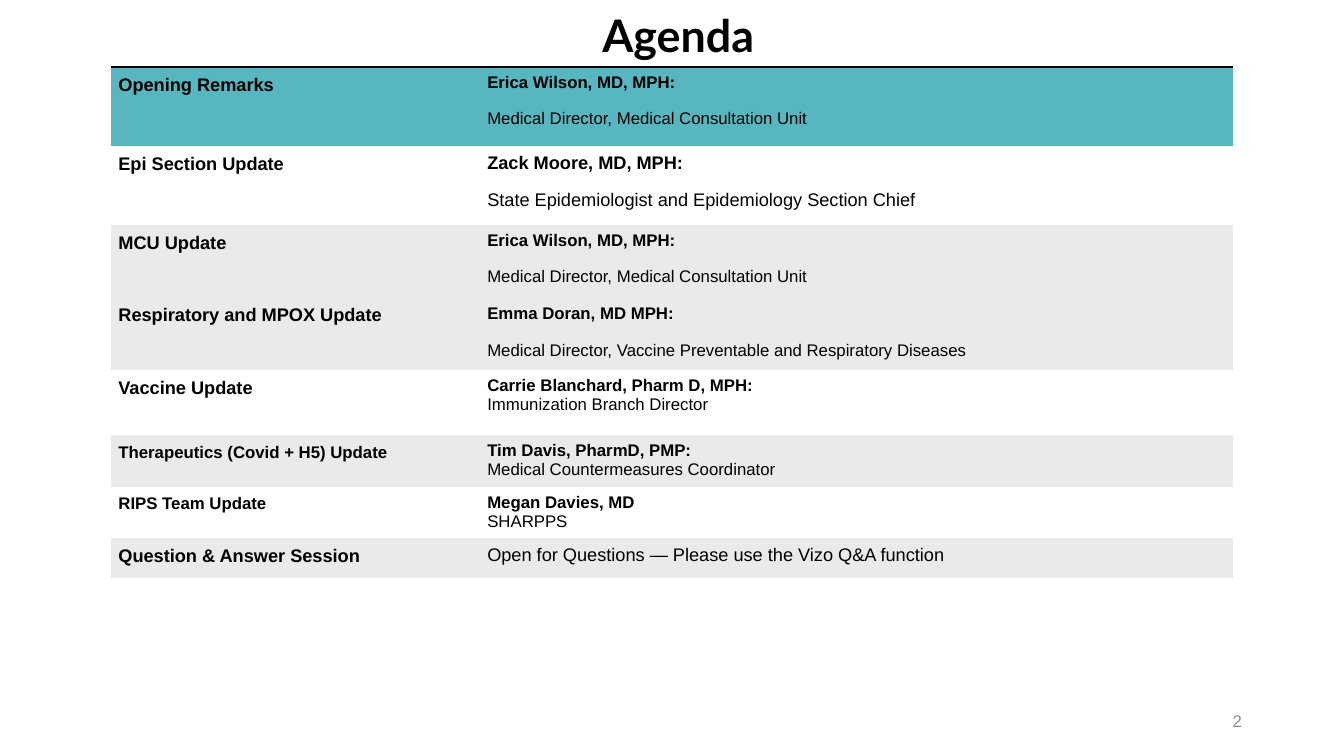
"""Builds the agenda slide with its table of speakers."""
from lxml.etree import SubElement
from pptx import Presentation
from pptx.dml.color import RGBColor
from pptx.enum.text import MSO_ANCHOR, PP_ALIGN
from pptx.oxml import parse_xml
from pptx.oxml.ns import nsdecls, qn
from pptx.util import Pt

HUES = {"ink": "000000", "teal": "58B6C0", "grey": "EAEAEA",
        "white": "FFFFFF", "page": "8C8C8C"}
PLAIN = "{2D5ABB26-0587-4C30-8999-92F81FD0307C}"
COLS = (263.5, 537.8)

# height, fill, topic, topic size, speaker, role, text size, gap
ROWS = [
    (56.4, "teal", "Opening Remarks", 13, "Erica Wilson, MD, MPH:",
     "Medical Director, Medical Consultation Unit", 12, 12),
    (56.4, "white", "Epi Section Update", 13, "Zack Moore, MD, MPH:",
     "State Epidemiologist and Epidemiology Section Chief", 13, 12),
    (51.8, "grey", "MCU Update", 13, "Erica Wilson, MD, MPH:",
     "Medical Director, Medical Consultation Unit", 12, 12),
    (51.8, "grey", "Respiratory and MPOX Update", 13, "Emma Doran, MD MPH:",
     "Medical Director, Vaccine Preventable and Respiratory Diseases",
     12, 13.5),
    (46.4, "white", "Vaccine Update", 13, "Carrie Blanchard, Pharm D, MPH:",
     "Immunization Branch Director", 12, 0),
    (37.1, "grey", "Therapeutics (Covid + H5) Update", 12,
     "Tim Davis, PharmD, PMP:", "Medical Countermeasures Coordinator", 12, 0),
    (36.8, "white", "RIPS Team Update", 12, "Megan Davies, MD",
     "SHARPPS", 12, 0),
    (28.4, "grey", "Question & Answer Session", 13, "",
     "Open for Questions — Please use the Vizo Q&A function", 13, 0),
]


def add_run(para, text, size, bold=False, hue="ink", face="Arial"):
    """Add one styled run to a paragraph."""
    run = para.add_run()
    run.text = text
    font = run.font
    font.name, font.size, font.bold = face, Pt(size), bold
    font.color.rgb = RGBColor.from_string(HUES[hue])


def add_label(slide, box, text, size, align, wrap=True, **style):
    """Add a text box that holds one line."""
    frame = slide.shapes.add_textbox(*map(Pt, box)).text_frame
    frame.word_wrap = wrap
    frame.vertical_anchor = MSO_ANCHOR.MIDDLE
    para = frame.paragraphs[0]
    para.alignment = align
    add_run(para, text, size, **style)


def fill_cell(cell, hue, lines, size, gap=0, space=None):
    """Fill a cell and write its lines of text and weight."""
    cell.fill.solid()
    cell.fill.fore_color.rgb = RGBColor.from_string(HUES[hue])
    cell.margin_left = cell.margin_right = Pt(5.4)
    cell.margin_top, cell.margin_bottom = Pt(4.8), Pt(3)
    frame = cell.text_frame
    for spot, (text, bold) in enumerate(lines):
        para = frame.add_paragraph() if spot else frame.paragraphs[0]
        if spot:
            para.space_before = Pt(gap)
        if space:
            para.line_spacing = space
        add_run(para, text, size, bold)


def rule_top(cell, width):
    """Draw a line along the top of a cell."""
    line = parse_xml(f'<a:lnT {nsdecls("a")} w="{Pt(width)}"/>')
    paint = SubElement(line, qn("a:solidFill"))
    SubElement(paint, qn("a:srgbClr"), val=HUES["ink"])
    cell._tc.get_or_add_tcPr().insert(0, line)


def add_grid(slide):
    """Add the agenda table."""
    high = sum(row[0] for row in ROWS)
    frame = slide.shapes.add_table(len(ROWS), len(COLS), Pt(79.2), Pt(47.8),
                                   Pt(sum(COLS)), Pt(high))
    table = frame.table
    table.first_row = table.horz_banding = False
    table._tbl.tblPr.find(qn("a:tableStyleId")).text = PLAIN
    for col, width in zip(table.columns, COLS):
        col.width = Pt(width)
    for spot, (tall, hue, topic, big, name, role, size, gap) in enumerate(ROWS):
        table.rows[spot].height = Pt(tall)
        lines = [(name, True)] if name else []
        fill_cell(table.cell(spot, 0), hue, [(topic, True)], big, space=1.07)
        fill_cell(table.cell(spot, 1), hue, lines + [(role, False)], size, gap)
    for spot in range(len(COLS)):
        rule_top(table.cell(0, spot), 2.25)


def main():
    """Build and save the slide."""
    deck = Presentation()
    deck.slide_width, deck.slide_height = Pt(960), Pt(540)
    slide = deck.slides.add_slide(deck.slide_layouts[6])
    add_label(slide, (678.2, 500.4, 216, 28.8), "2", 12, PP_ALIGN.RIGHT,
              hue="page")
    add_grid(slide)
    add_label(slide, (422.6, 1.4, 123.8, 46.1), "Agenda", 32, PP_ALIGN.CENTER,
              wrap=False, bold=True, face="Lato")
    deck.save("out.pptx")


if __name__ == "__main__":
    main()
